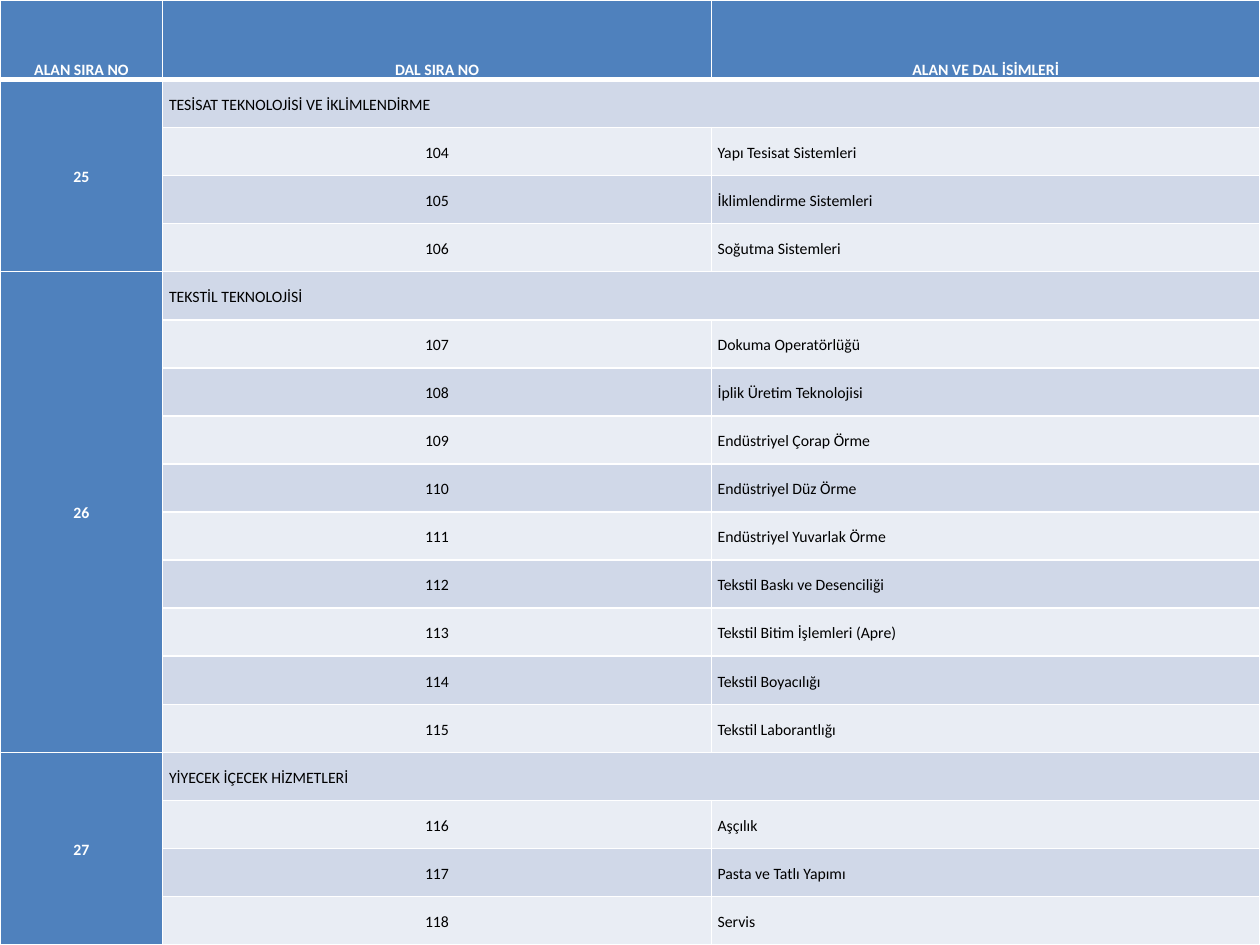
from lxml import etree
from pptx import Presentation
from pptx.dml.color import RGBColor
from pptx.enum.text import MSO_ANCHOR, PP_ALIGN
from pptx.oxml.ns import qn
from pptx.util import Pt

LEFT, CENTER = PP_ALIGN.LEFT, PP_ALIGN.CENTER
MIDDLE, BOTTOM = MSO_ANCHOR.MIDDLE, MSO_ANCHOR.BOTTOM

BLUE = RGBColor(0x4F, 0x81, 0xBD)
DARK_BAND = RGBColor(0xD0, 0xD8, 0xE8)
LIGHT_BAND = RGBColor(0xE9, 0xED, 0xF4)
WHITE = RGBColor(0xFF, 0xFF, 0xFF)
BLACK = RGBColor(0, 0, 0)

SLIDE_WIDTH, SLIDE_HEIGHT = 720, 540
HEADER_HEIGHT = 45.4
FIELD_NO_WIDTH = 93
THIN, THICK = 1, 3

HEADINGS = ["ALAN SIRA NO", "DAL SIRA NO", "ALAN VE DAL İSİMLERİ"]
FIRST_FIELD_NO, FIRST_BRANCH_NO = 25, 104
FIELDS = [
    ("TESİSAT TEKNOLOJİSİ VE İKLİMLENDİRME", [
        "Yapı Tesisat Sistemleri",
        "İklimlendirme Sistemleri",
        "Soğutma Sistemleri",
    ]),
    ("TEKSTİL TEKNOLOJİSİ", [
        "Dokuma Operatörlüğü",
        "İplik Üretim Teknolojisi",
        "Endüstriyel Çorap Örme",
        "Endüstriyel Düz Örme",
        "Endüstriyel Yuvarlak Örme",
        "Tekstil Baskı ve Desenciliği",
        "Tekstil Bitim İşlemleri (Apre)",
        "Tekstil Boyacılığı",
        "Tekstil Laborantlığı",
    ]),
    ("YİYECEK İÇECEK HİZMETLERİ", [
        "Aşçılık",
        "Pasta ve Tatlı Yapımı",
        "Servis",
    ]),
]


def set_borders(cell, top, bottom):
    properties = cell._tc.get_or_add_tcPr()
    widths = {"a:lnL": THIN, "a:lnR": THIN, "a:lnT": top, "a:lnB": bottom}
    for position, (tag, width) in enumerate(widths.items()):
        border = etree.Element(qn(tag), w=str(Pt(width)))
        fill = etree.SubElement(border, qn("a:solidFill"))
        etree.SubElement(fill, qn("a:srgbClr"), val=str(WHITE))
        properties.insert(position, border)


def style_cell(cell, fill, align, anchor=MIDDLE, color=BLACK, bold=False):
    cell.fill.solid()
    cell.fill.fore_color.rgb = fill
    cell.vertical_anchor = anchor
    cell.margin_left = cell.margin_right = Pt(3.6)
    cell.margin_top = cell.margin_bottom = Pt(0)
    paragraph = cell.text_frame.paragraphs[0]
    paragraph.alignment = align
    paragraph.line_spacing = 1.15
    paragraph.space_after = Pt(10)
    for font in [paragraph.font] + [run.font for run in paragraph.runs]:
        font.name = "Calibri"
        font.size = Pt(9)
        font.bold = bold
        font.color.rgb = color


def add_branch_table(slide, left, top, width, height):
    row_count = 1 + sum(1 + len(branches) for _, branches in FIELDS)
    table = slide.shapes.add_table(
        row_count, len(HEADINGS), Pt(left), Pt(top), Pt(width), Pt(height)
    ).table

    branch_width = (width - FIELD_NO_WIDTH) / 2
    for column, column_width in zip(
        table.columns, [FIELD_NO_WIDTH, branch_width, branch_width]
    ):
        column.width = Pt(column_width)
    row_height = (height - HEADER_HEIGHT) / (row_count - 1)
    for index, row in enumerate(table.rows):
        row.height = Pt(row_height if index else HEADER_HEIGHT)

    for column, heading in enumerate(HEADINGS):
        table.cell(0, column).text_frame.text = heading

    row, branch_no = 1, FIRST_BRANCH_NO
    for field_no, (field, branches) in enumerate(FIELDS, FIRST_FIELD_NO):
        table.cell(row, 0).text_frame.text = str(field_no)
        table.cell(row, 0).merge(table.cell(row + len(branches), 0))
        table.cell(row, 1).text_frame.text = field
        table.cell(row, 1).merge(table.cell(row, 2))
        for offset, branch in enumerate(branches, 1):
            table.cell(row + offset, 1).text_frame.text = str(branch_no)
            table.cell(row + offset, 2).text_frame.text = branch
            branch_no += 1
        row += 1 + len(branches)

    for row in range(row_count):
        band = DARK_BAND if row % 2 else LIGHT_BAND
        for column in range(len(HEADINGS)):
            cell = table.cell(row, column)
            if row == 0:
                style_cell(cell, BLUE, CENTER, BOTTOM, WHITE, True)
            elif column == 0:
                style_cell(cell, BLUE, CENTER, MIDDLE, WHITE, True)
            else:
                is_branch_no = column == 1 and not cell.is_merge_origin
                style_cell(cell, band, CENTER if is_branch_no else LEFT)
            set_borders(
                cell, THICK if row == 1 else THIN, THICK if row == 0 else THIN
            )


def main():
    presentation = Presentation()
    presentation.slide_width = Pt(SLIDE_WIDTH)
    presentation.slide_height = Pt(SLIDE_HEIGHT)
    slide = presentation.slides.add_slide(presentation.slide_layouts[6])
    add_branch_table(slide, 0, 0, SLIDE_WIDTH, SLIDE_HEIGHT)
    presentation.save("out.pptx")


if __name__ == "__main__":
    main()
